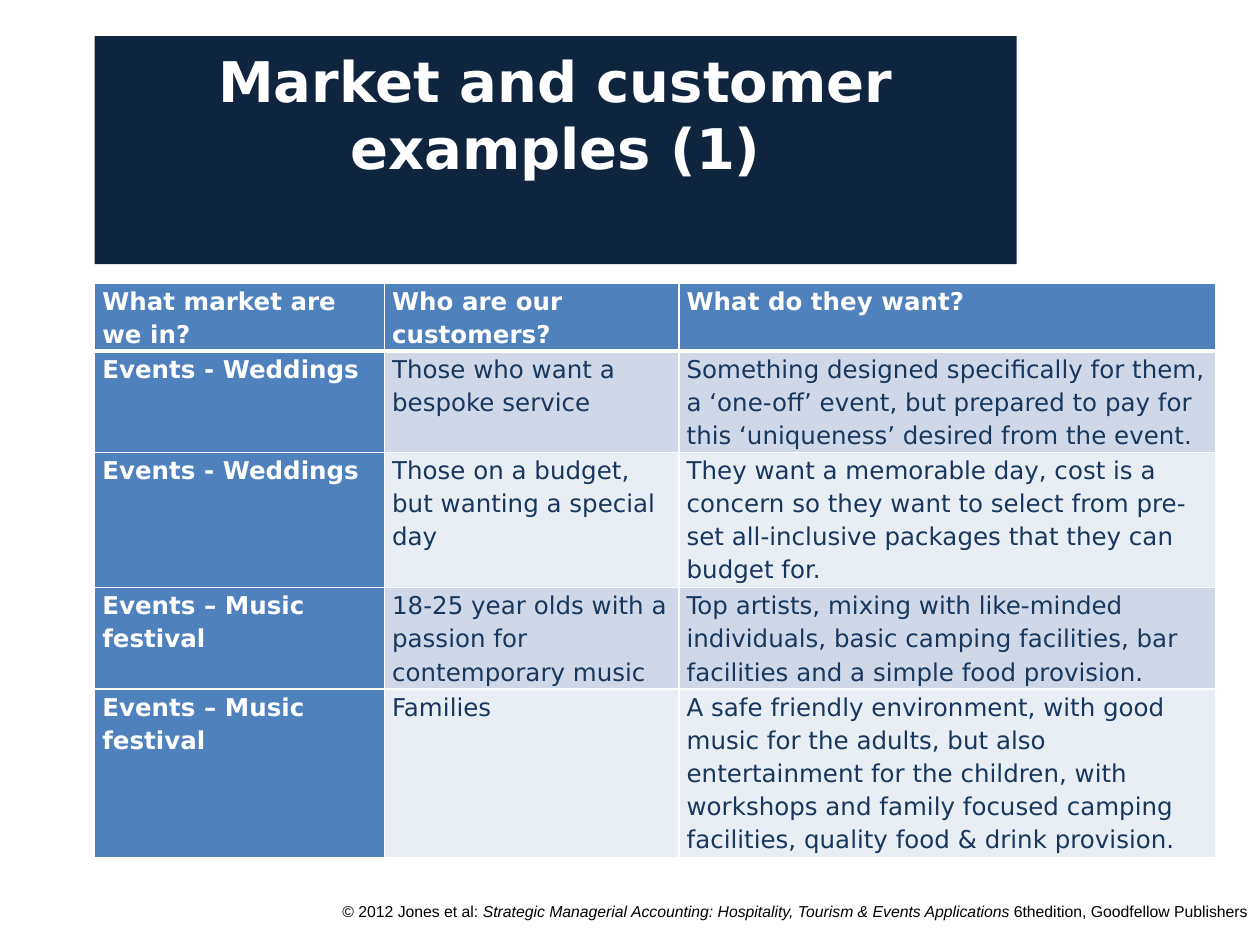
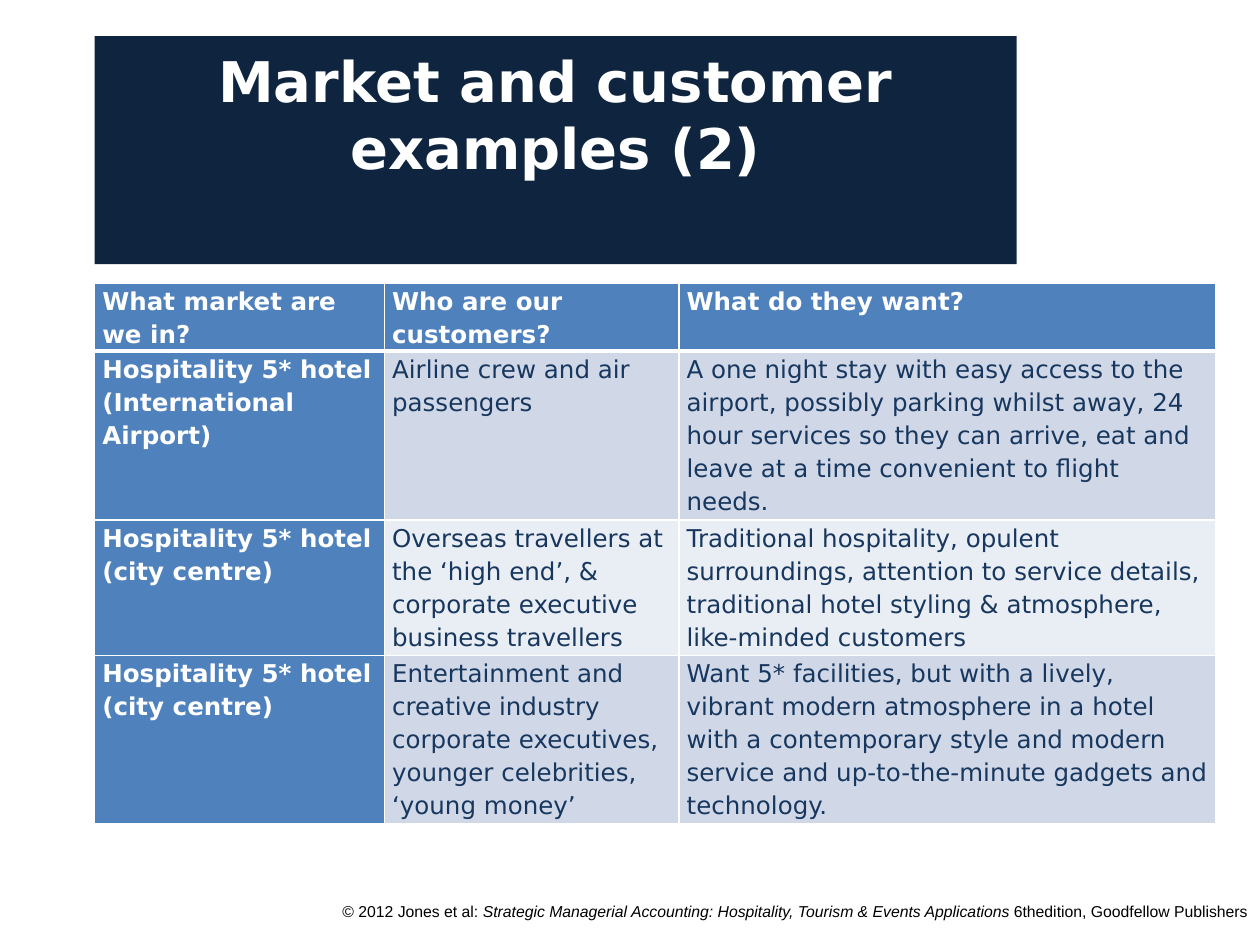
import pptx
import pptx.util
import pptx.dml.color
import pptx.enum.shapes
import pptx.enum.text
import pptx.oxml
import pptx.oxml.ns
from dataclasses import dataclass

Pt = pptx.util.Pt
Align = pptx.enum.text.PP_ALIGN


@dataclass(frozen=True)
class Theme:
    navy: str = "0F243E"
    blue: str = "4F81BD"
    ink: str = "17375E"
    white: str = "FFFFFF"
    black: str = "000000"
    bands: tuple = ("D0D8E8", "E9EDF4")
    face: str = "DejaVu Sans"
    plain: str = "Arial"
    title: int = 32
    body: int = 14
    small: int = 9
    line: float = 18.85


THEME = Theme()
TITLE = (54, 20.6, 527, 130.4)
GRID = (54, 162, 641, 320)
FOOT = (160.5, 512, 559.5, 28)
COLS = (165.6, 168.3, 307)
HEADS = ("What market are we in?", "Who are our customers?", "What do they want?")
CREDIT = (
    ("© 2012 Jones et al: ", False),
    ("Strategic Managerial Accounting: Hospitality, Tourism & Events Applications ", True),
    ("6thedition, Goodfellow Publishers", False),
)

EVENTS = (
    (3, "Events - Weddings", "Those who want a bespoke service",
     "Something designed specifically for them, a ‘one-off’ event, but prepared to pay "
     "for this ‘uniqueness’ desired from the event."),
    (4, "Events - Weddings", "Those on a budget, but wanting a special day",
     "They want a memorable day, cost is a concern so they want to select from pre-set "
     "all-inclusive packages that they can budget for."),
    (3, "Events – Music festival", "18-25 year olds with a passion for contemporary music",
     "Top artists, mixing with like-minded individuals, basic camping facilities, bar "
     "facilities and a simple food provision."),
    (5, "Events – Music festival", "Families",
     "A safe friendly environment, with good music for the adults, but also entertainment "
     "for the children, with workshops and family focused camping facilities, quality "
     "food & drink provision."),
)
HOTELS = (
    (5, "Hospitality 5* hotel (International Airport)", "Airline crew and air passengers",
     "A one night stay with easy access to the airport, possibly parking whilst away, 24 "
     "hour services so they can arrive, eat and leave at a time convenient to flight needs."),
    (4, "Hospitality 5* hotel\n(city centre)",
     "Overseas travellers at the ‘high end’, & corporate executive business travellers",
     "Traditional hospitality, opulent surroundings, attention to service details, "
     "traditional hotel styling & atmosphere, like-minded customers"),
    (5, "Hospitality 5* hotel\n(city centre)",
     "Entertainment and creative industry corporate executives, younger celebrities, "
     "‘young money’",
     "Want 5* facilities, but with a lively, vibrant modern atmosphere in a hotel with a "
     "contemporary style and modern service and up-to-the-minute gadgets and technology."),
)


def tint(code):
    return pptx.dml.color.RGBColor.from_string(code)


def paint(fill, code):
    fill.solid()
    fill.fore_color.rgb = tint(code)


def write(frame, text, size=THEME.body, face=THEME.face, color=THEME.ink,
          bold=False, align=Align.LEFT, space=1.0):
    frame.word_wrap = True
    lines = [((part, False),) for part in text.split("\n")] if isinstance(text, str) else [text]
    for index, runs in enumerate(lines):
        para = frame.add_paragraph() if index else frame.paragraphs[0]
        para.alignment = align
        para.line_spacing = space
        for words, slant in runs:
            run = para.add_run()
            run.text = words
            font = run.font
            font.size, font.name = Pt(size), face
            font.bold, font.italic = bold, slant
            font.color.rgb = tint(color)


def edge(cell, top, base):
    props = cell._tc.get_or_add_tcPr()
    sides = (("L", 1), ("R", 1), ("T", top), ("B", base))
    for index, (side, width) in enumerate(sides):
        props.insert(index, pptx.oxml.parse_xml(
            f'<a:ln{side} {pptx.oxml.ns.nsdecls("a")} w="{Pt(width)}">'
            f'<a:solidFill><a:srgbClr val="{THEME.white}"/></a:solidFill></a:ln{side}>'))


def footer(slide, box):
    frame = slide.shapes.add_textbox(*map(Pt, box)).text_frame
    write(frame, CREDIT, size=THEME.small, face=THEME.plain,
          color=THEME.black, align=Align.RIGHT)


def banner(slide, box, text):
    shape = slide.shapes.add_shape(pptx.enum.shapes.MSO_SHAPE.RECTANGLE, *map(Pt, box))
    shape.shadow.inherit = False
    shape.line.fill.background()
    paint(shape.fill, THEME.navy)
    frame = shape.text_frame
    frame.vertical_anchor = pptx.enum.text.MSO_ANCHOR.TOP
    frame.margin_top = Pt(6)
    write(frame, text, size=THEME.title, color=THEME.white, bold=True, align=Align.CENTER)


def grid(slide, box, data):
    rows = ((2, *HEADS), *data)
    table = slide.shapes.add_table(len(rows), len(COLS), *map(Pt, box)).table
    for col, width in zip(table.columns, COLS):
        col.width = Pt(width)
    for y, (count, *texts) in enumerate(rows):
        table.rows[y].height = Pt(count * THEME.line)
        for x, text in enumerate(texts):
            cell = table.cell(y, x)
            head = y == 0 or x == 0
            cell.margin_left = cell.margin_right = Pt(4.5)
            cell.margin_top = cell.margin_bottom = Pt(0)
            paint(cell.fill, THEME.blue if head else THEME.bands[(y - 1) % 2])
            edge(cell, 3 if y == 1 else 1, 3 if y == 0 else 1)
            write(cell.text_frame, text, bold=head, space=1.15,
                  color=THEME.white if head else THEME.ink)


def page(deck, title, data):
    slide = deck.slides.add_slide(deck.slide_layouts[6])
    footer(slide, FOOT)
    banner(slide, TITLE, title)
    grid(slide, GRID, data)


def main():
    deck = pptx.Presentation()
    deck.slide_width, deck.slide_height = Pt(720), Pt(540)
    for number, data in enumerate((EVENTS, HOTELS), 1):
        page(deck, f"Market and customer examples ({number})", data)
    deck.save("out.pptx")


if __name__ == "__main__":
    main()
